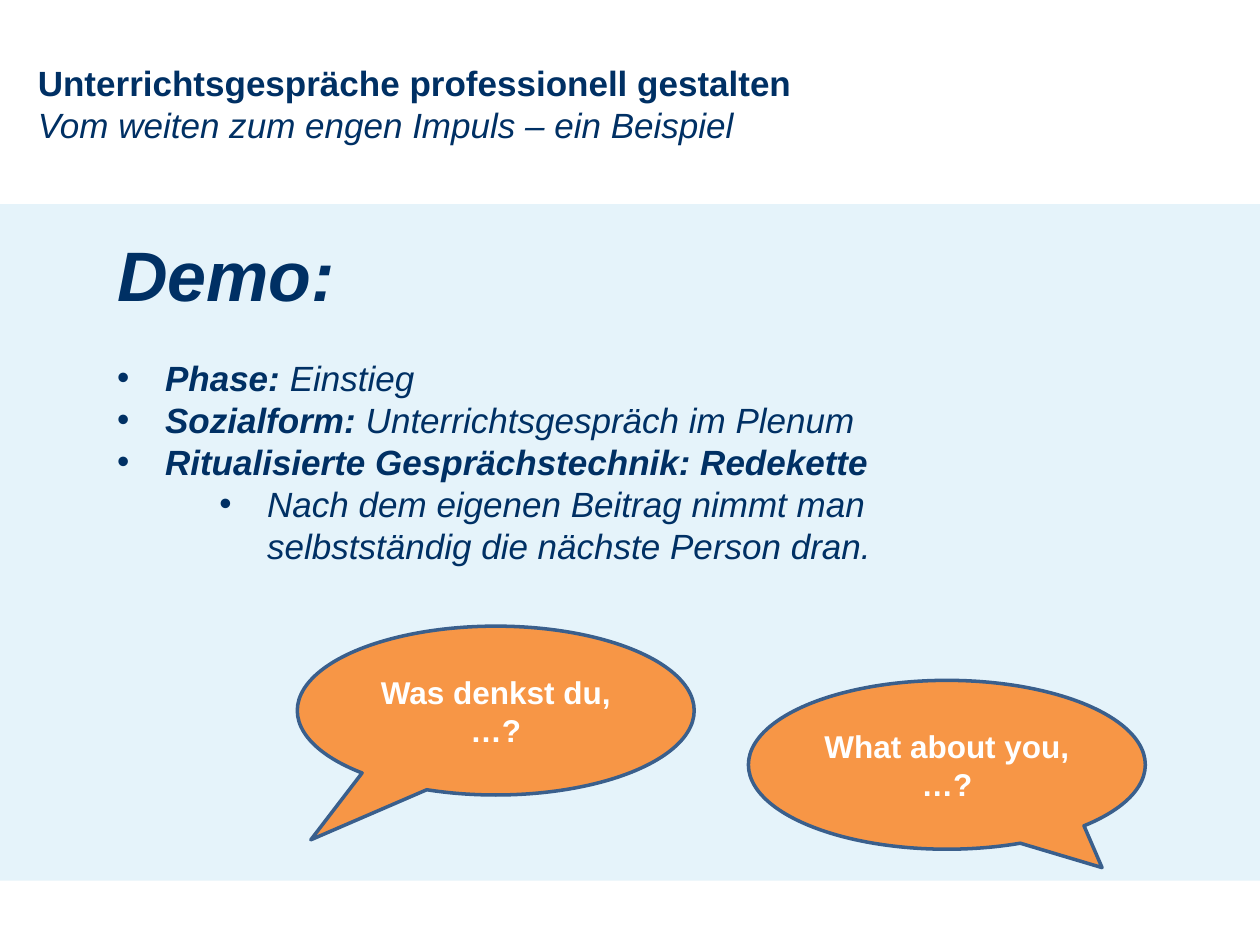
from dataclasses import dataclass
from lxml.etree import SubElement as Sub
from pptx import Presentation
from pptx.dml.color import RGBColor as Rgb
from pptx.enum.shapes import MSO_SHAPE as Kind
from pptx.enum.text import MSO_ANCHOR as Anchor, MSO_AUTO_SIZE as Fit, PP_ALIGN as Align
from pptx.oxml.ns import qn
from pptx.util import Inches, Pt


@dataclass(frozen=True)
class Theme:
    face: str = "Arial"
    navy: str = "003064"
    sky: str = "008CCF"
    fill: str = "F79646"
    edge: str = "3A5F8C"
    white: str = "FFFFFF"
    head: int = 40
    text: int = 20
    talk: int = 18


T = Theme()
WIDE, HIGH = 10, 7.5

# Content: runs are (text, style), where style holds b (bold) and i (italic)
TITLE = [
    [("Unterrichtsgespräche professionell gestalten", "b")],
    [("Vom weiten zum engen Impuls – ein Beispiel", "i")],
]
HEAD = [("Demo:", "bi")]
POINTS = [  # level, runs
    (0, [("Phase: ", "bi"), ("Einstieg", "i")]),
    (0, [("Sozialform: ", "bi"), ("Unterrichtsgespräch im Plenum", "i")]),
    (0, [("Ritualisierte Gesprächstechnik: Redekette", "bi")]),
    (1, [("Nach dem eigenen Beitrag nimmt man selbstständig "
          "die nächste Person dran.", "i")]),
]
TALK = [  # text, left, top, tail offset
    ("Was denkst du, …?", 2.36, 4.97, (-0.466, 0.765)),
    ("What about you, …?", 5.94, 5.4, (0.391, 0.609)),
]

# Places: left, top, width, height
BAND = (0, 1.62, WIDE, 5.37)
TOP = (0.2, 0.44, 6.54, 0.77)
BODY = (0.83, 1.79, 6.54, 3.47)
TALK_SIZE = (3.15, 1.34)
MARGINS = (0.38, 1.19)  # text margin by level
HANG = 0.38


def place(shape, box):
    shape.left, shape.top, shape.width, shape.height = map(Inches, box)


def add_runs(para, runs, size, color):
    para.space_before = Pt(0)
    for text, style in runs:
        run = para.add_run()
        run.text = text
        font = run.font
        font.name, font.size = T.face, Pt(size)
        font.bold, font.italic = "b" in style, "i" in style
        font.color.rgb = Rgb.from_string(color)


def set_bullet(para, level=None):
    props = para._p.get_or_add_pPr()
    margin = 0 if level is None else MARGINS[level]
    props.set("marL", str(Inches(margin)))
    props.set("indent", str(0 if level is None else -Inches(HANG)))
    if level is None:
        Sub(props, qn("a:buNone"))
    else:
        para.level = level
        Sub(props, qn("a:buFont"), typeface=T.face)
        Sub(props, qn("a:buChar"), char="•")


def open_frame(shape, box):
    place(shape, box)
    frame = shape.text_frame
    frame.word_wrap = True
    frame.auto_size = Fit.NONE
    frame.vertical_anchor = Anchor.TOP
    return frame


def add_form(slide, kind, box, color):
    shape = slide.shapes.add_shape(kind, *map(Inches, box))
    shape.shadow.inherit = False
    shape.fill.solid()
    shape.fill.fore_color.rgb = Rgb.from_string(color)
    return shape


deck = Presentation()
deck.slide_width, deck.slide_height = Inches(WIDE), Inches(HIGH)
slide = deck.slides.add_slide(deck.slide_layouts[1])
title, body = slide.placeholders

# Pale band behind the text
band = add_form(slide, Kind.RECTANGLE, BAND, T.sky)
band.line.fill.background()
tint = band._element.spPr.find(".//" + qn("a:srgbClr"))
Sub(tint, qn("a:alpha"), val="10000")
slide.shapes._spTree.insert(2, band._element)

# Title
frame = open_frame(title, TOP)
for n, runs in enumerate(TITLE):
    para = frame.add_paragraph() if n else frame.paragraphs[0]
    para.alignment = Align.LEFT
    add_runs(para, runs, T.text, T.navy)

# Heading and list
frame = open_frame(body, BODY)
para = frame.paragraphs[0]
set_bullet(para)
add_runs(para, HEAD, T.head, T.navy)
for n, (level, runs) in enumerate(POINTS):
    para = frame.add_paragraph()
    set_bullet(para, level)
    add_runs(para, runs, T.text, T.navy)
    if n == 0:
        para.space_before = Pt(T.text * 1.15)  # one line of air

# Speech bubbles
for text, left, top, tail in TALK:
    bubble = add_form(slide, Kind.OVAL_CALLOUT, (left, top, *TALK_SIZE), T.fill)
    bubble.line.color.rgb = Rgb.from_string(T.edge)
    bubble.line.width = Pt(2)
    for n, share in enumerate(tail):
        bubble.adjustments[n] = share
    frame = bubble.text_frame
    frame.word_wrap = True
    frame.vertical_anchor = Anchor.MIDDLE
    para = frame.paragraphs[0]
    para.alignment = Align.CENTER
    add_runs(para, [(text, "b")], T.talk, T.white)

deck.save("out.pptx")
